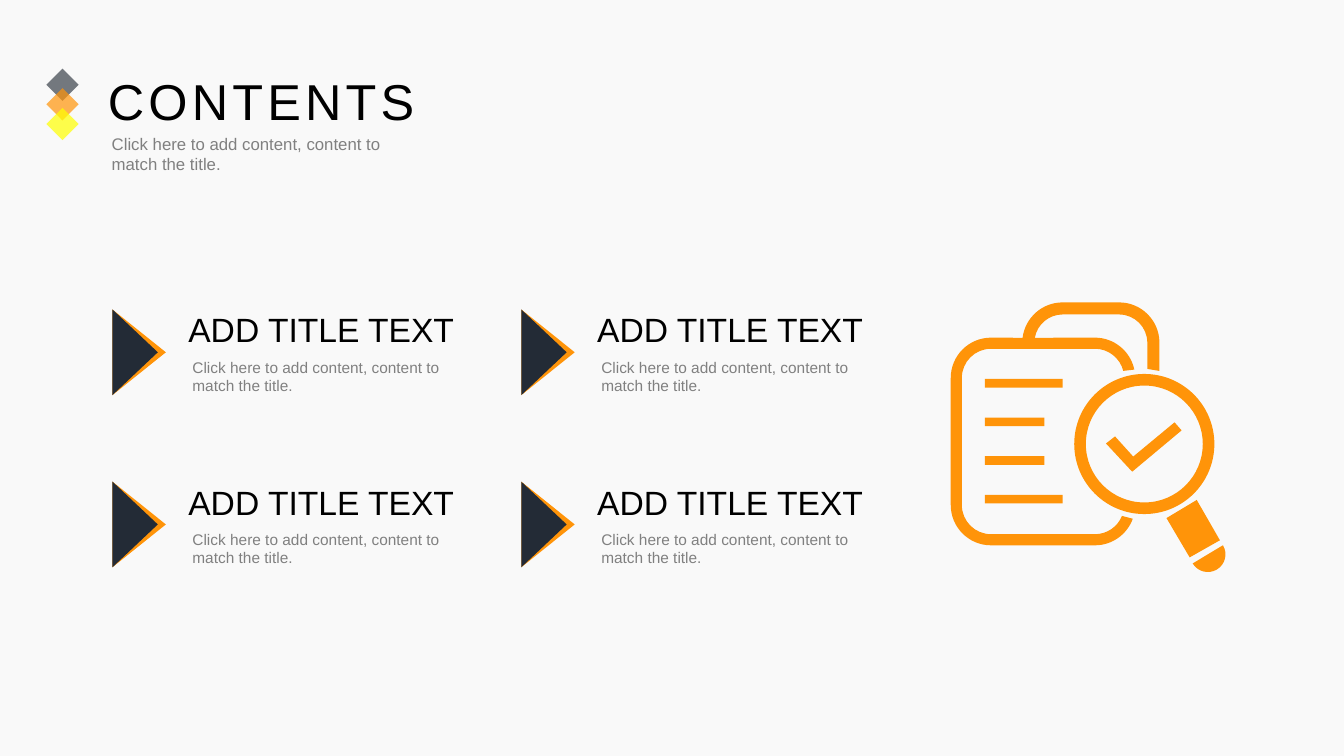
from math import ceil, cos, radians, sin, tan

from pptx import Presentation, util as u
from pptx.dml import color
from pptx.enum import shapes, text
from pptx.oxml import ns, xmlchemy

CELL = u.Inches(0.1)
ORANGE, NAVY, SLATE, YELLOW = "FF9409", "232B36", "3B424B", "FFFF00"
BLACK, GREY, PAPER = "000000", "808080", "F9F9F9"
PROMPT = "Click here to add content, content to match the title."


def cells(*lengths):
    """Turn grid cells into slide lengths."""
    return [round(length * CELL) for length in lengths]


def paint(fill, shade, opacity=100):
    """Fill solidly with a hex colour, optionally translucent."""
    fill.solid()
    fill.fore_color.rgb = color.RGBColor.from_string(shade)
    if opacity < 100:
        alpha = xmlchemy.OxmlElement("a:alpha")
        alpha.set("val", str(opacity * 1000))
        fill._xPr.find(".//" + ns.qn("a:srgbClr")).append(alpha)


def finish(shape, shade, opacity=100):
    """Give a shape a flat fill without line or shadow."""
    paint(shape.fill, shade, opacity)
    shape.line.fill.background()
    shape.shadow.inherit = False


def write(box, wording, size, shade):
    """Put one formatted paragraph into a text box or placeholder."""
    frame = box.text_frame
    frame.text = wording
    frame.word_wrap = True
    frame.auto_size = text.MSO_AUTO_SIZE.NONE
    frame.vertical_anchor = text.MSO_ANCHOR.TOP
    para = frame.paragraphs[0]
    span = para.runs[0]
    span.font.name = "Arial"
    span.font.size = u.Pt(size)
    paint(span.font.fill, shade)
    return para


def add_heading(page, left, top):
    """Place the diamonds, the slide title and its subtitle."""
    for row, shade in enumerate((SLATE, ORANGE, YELLOW)):
        diamond = page.shapes.add_shape(
            shapes.MSO_SHAPE.DIAMOND, *cells(left, top + 0.3 + 1.95 * row, 3.2, 3.2))
        finish(diamond, shade, 70)
    title = page.shapes.title
    title.left, title.top, title.width, title.height = cells(left + 5.1, top, 37.3, 7.1)
    para = write(title, "CONTENTS", 36, BLACK)
    para.alignment = text.PP_ALIGN.JUSTIFY
    para.runs[0].font._element.set("spc", "300")
    subtitle = page.shapes.add_textbox(*cells(left + 5.5, top + 6.3, 31.6, 5))
    write(subtitle, PROMPT, 12, GREY)


def add_arrowhead(page, left, middle, length, breadth, shade):
    """Place a triangle that points right from its left edge."""
    triangle = page.shapes.add_shape(
        shapes.MSO_SHAPE.ISOSCELES_TRIANGLE,
        *cells(left + (length - breadth) / 2, middle - length / 2, breadth, length))
    triangle.rotation = 90
    finish(triangle, shade)


def add_entry(page, left, top):
    """Place one contents entry with its arrowhead, title and text."""
    for length, shade in ((5.3, ORANGE), (4.5, NAVY)):
        add_arrowhead(page, left + 0.05, top + 4.75, length, 8.5, shade)
    detail = page.shapes.add_textbox(*cells(left + 7, top + 4.8, 28.9, 4.7))
    write(detail, PROMPT, 11, GREY)
    name = page.shapes.add_textbox(*cells(left + 6.6, top, 31.6, 5))
    write(name, "ADD TITLE TEXT", 24, BLACK)


def straight(*points):
    """List straight steps, each holding its end point."""
    return [[point] for point in points]


def arc(x, y, radius, start, end):
    """List a straight step to an arc, then its cubic curve steps."""
    def spot(angle, lean=0):
        return (x + radius * (cos(angle) - lean * sin(angle)),
                y + radius * (sin(angle) + lean * cos(angle)))

    pieces = ceil(abs(end - start) / 90)
    turn = radians(end - start) / pieces
    lean = 4 / 3 * tan(turn / 4)
    steps = straight(spot(radians(start)))
    for piece in range(pieces):
        first = radians(start) + piece * turn
        last = first + turn
        steps.append([spot(first, lean), spot(last, -lean), spot(last)])
    return steps


def bar(left, top, width, height):
    """List the corners of a rectangle."""
    right, bottom = left + width, top + height
    return straight((left, top), (right, top), (right, bottom), (left, bottom))


def add_outline(page, left, top, contours):
    """Draw contours of straight and curved steps as one freeform."""
    builder = page.shapes.build_freeform(*cells(*contours[0][0][0]))
    for number, contour in enumerate(contours):
        points = [cells(*point) for step in contour for point in step]
        if number:
            builder.move_to(*points[0])
        builder.add_line_segments(points[1:], close=True)
    outline = builder.convert_to_shape(*cells(left, top))
    segments = outline._element.iter(ns.qn("a:lnTo"))
    queue = iter(list(segments))
    for step in (step for contour in contours for step in contour[1:]):
        parts = [next(queue) for _ in step]
        if len(parts) == 3:
            curve = xmlchemy.OxmlElement("a:cubicBezTo")
            parts[0].addprevious(curve)
            for part in parts:
                curve.append(part[0])
                part.getparent().remove(part)
    return outline


def add_review_icon(page, left, top):
    """Draw two sheets under a magnifier as one outline."""
    sheets = [
        *arc(14.3, 20.1, 4, 20, 90), *arc(4, 20.1, 4, 90, 180),
        *arc(4, 7.5, 4, 180, 270), *arc(11.1, 4, 4, 187, 270),
        *arc(16.7, 4, 4, 270, 360), *straight((20.7, 6.8), (19.5, 6.6)),
        *arc(16.7, 4, 2.8, 360, 270), *arc(11.1, 4, 2.8, 270, 190),
        *arc(14.3, 7.5, 4, 270, 348), *arc(14.3, 7.5, 2.9, 346, 270),
        *arc(4, 7.5, 2.9, 270, 180), *arc(4, 20.1, 2.9, 180, 90),
        *arc(14.3, 20.1, 2.9, 90, 22)]
    lens = [arc(19.2, 14.05, 6.95, 0, 360), arc(19.2, 14.05, 5.8, 360, 0)]
    handle = straight((24.4, 19.6), (21.4, 21.4), (23.7, 25.3), (26.7, 23.6))
    tip = arc(25.5, 25, 1.75, -31, 149)
    check = straight((18.1, 15.3), (16.3, 13.3), (15.4, 14),
                     (18, 16.8), (22.9, 12.7), (22.2, 11.9))
    lines = [bar(3.4, 7.6 + 3.83 * row, width, 0.85)
             for row, width in enumerate((7.7, 5.9, 5.9, 7.7))]
    icon = add_outline(page, left, top, [sheets, *lens, handle, tip, check, *lines])
    finish(icon, ORANGE)


def main():
    """Build the contents slide and save the deck."""
    deck = Presentation()
    deck.slide_width, deck.slide_height = u.Inches(13.33), u.Inches(7.5)
    page = deck.slides.add_slide(deck.slide_layouts.get_by_name("Title Only"))
    paint(page.background.fill, PAPER)
    add_heading(page, 4.6, 6.5)
    for column in range(2):
        for row in range(2):
            add_entry(page, 11.1 + 40.55 * column, 30.2 + 17.08 * row)
    add_review_icon(page, 94.3, 30)
    deck.save("out.pptx")


if __name__ == "__main__":
    main()
